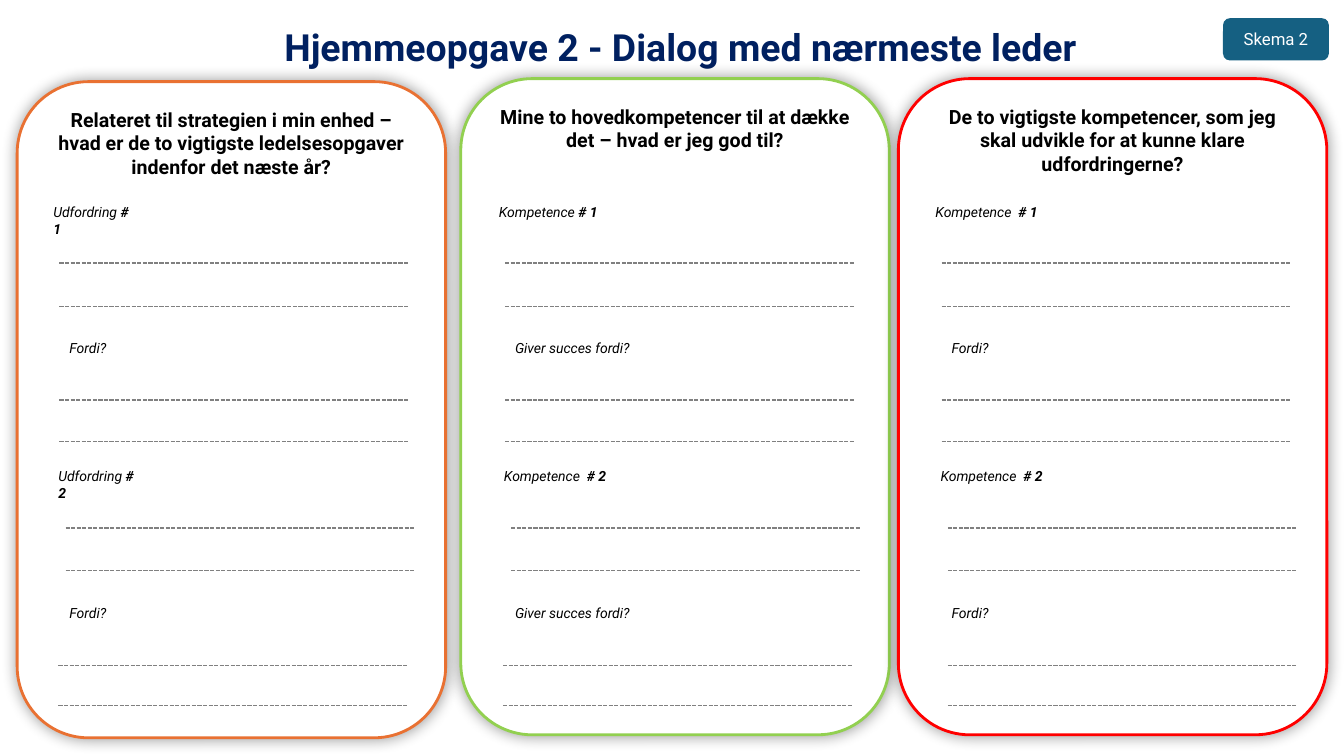
from lxml import etree
from pptx import Presentation
from pptx.dml.color import RGBColor
from pptx.enum.dml import MSO_LINE
from pptx.enum.shapes import MSO_CONNECTOR, MSO_SHAPE
from pptx.enum.text import MSO_ANCHOR, MSO_AUTO_SIZE, PP_ALIGN
from pptx.oxml import parse_xml
from pptx.oxml.ns import nsdecls, qn
from pptx.util import Pt

PX = 9144
BLACK = RGBColor(0, 0, 0)
WHITE = RGBColor(255, 255, 255)
NAVY = RGBColor(0x00, 0x20, 0x60)
TEAL = RGBColor(0x15, 0x60, 0x82)
GREY = RGBColor(0x80, 0x80, 0x80)
ORANGE = RGBColor(0xE9, 0x71, 0x32)
GREEN = RGBColor(0x92, 0xD0, 0x50)
RED = RGBColor(0xFF, 0x00, 0x00)

TITLE = "Hjemmeopgave 2 - Dialog med nærmeste leder"
TAG = "Skema 2"
COLUMNS = [
    dict(card=(17, 81), color=ORANGE, left=59, last_dx=-1,
         heading="Relateret til strategien i min enhed – hvad er de to "
                 "vigtigste ledelsesopgaver indenfor det næste år?",
         topics=[("Udfordring ", "# 1", 105), ("Udfordring ", "# 2", 105)],
         reason=("Fordi?", 58)),
    dict(card=(457, 78), color=GREEN, left=501, last_dx=-2,
         heading="Mine to hovedkompetencer til at dække det – "
                 "hvad er jeg god til?",
         topics=[("Kompetence ", "# 1", 118), ("Kompetence  ", "# 2", 121)],
         reason=("Giver succes fordi?", 136)),
    dict(card=(891, 78), color=RED, left=934, last_dx=6,
         heading="De to vigtigste kompetencer, som jeg skal udvikle "
                 "for at kunne klare udfordringerne?",
         topics=[("Kompetence  ", "# 1", 121), ("Kompetence  ", "# 2", 121)],
         reason=("Fordi?", 58)),
]
CARD_W, CARD_H = 425, 651
LINE_W, LABEL_H = 346, 27
TOPIC_AT = [(-16, 197), (-11, 459)]
REASON_Y = [332, 595]
FIRST_LINES = [(0, 261), (0, 304), (0, 397), (0, 438), (6, 524), (6, 566)]
LAST_LINES = [660, 700]

prs = Presentation()
prs.slide_width, prs.slide_height = 1333 * PX, 750 * PX
s = prs.slides.add_slide(prs.slide_layouts[5])


def box(*at):
    return [v * PX for v in at]


def style(r, size, color, bold=False, italic=False):
    r.font.name = "Roboto"
    r.font.size = Pt(size)
    r.font.color.rgb = color
    r.font.bold = bold
    r.font.italic = italic


def add_panel(at, fill, text, size, color, bold, anchor):
    sp = s.shapes.add_shape(MSO_SHAPE.ROUNDED_RECTANGLE, *box(*at))
    sp.shadow.inherit = False
    sp.fill.solid()
    sp.fill.fore_color.rgb = fill
    sp.line.fill.background()
    tf = sp.text_frame
    tf.word_wrap = True
    tf.vertical_anchor = anchor
    tf.text = text
    p = tf.paragraphs[0]
    p.alignment = PP_ALIGN.CENTER
    style(p.runs[0], size, color, bold)
    return sp


def add_card(column):
    sp = add_panel((*column["card"], CARD_W, CARD_H), WHITE,
                   column["heading"], 14, BLACK, True, MSO_ANCHOR.TOP)
    sp.line.color.rgb = column["color"]
    sp.line.width = Pt(2)
    effects = sp._element.spPr.find(qn("a:effectLst"))
    effects.append(parse_xml(
        f'<a:outerShdw {nsdecls("a")} blurRad="{Pt(11)}" dist="0" dir="0" '
        'algn="ctr" rotWithShape="0"><a:srgbClr val="000000">'
        '<a:alpha val="40000"/></a:srgbClr></a:outerShdw>'))


def add_label(x, y, w, text, number=""):
    tf = s.shapes.add_textbox(*box(x, y, w, LABEL_H)).text_frame
    tf.word_wrap = True
    p = tf.paragraphs[0]
    for part, bold in ((text, False), (number, True)):
        if part:
            r = p.add_run()
            r.text = part
            style(r, 10, BLACK, bold, True)


def add_line(x, y):
    c = s.shapes.add_connector(MSO_CONNECTOR.STRAIGHT,
                               *box(x, y, x + LINE_W, y))
    c.line.color.rgb = GREY
    c.line.width = Pt(1)
    c.line.dash_style = MSO_LINE.SQUARE_DOT
    etree.SubElement(c._element.spPr, qn("a:effectLst"))


title = s.shapes.title
title.left, title.top, title.width, title.height = box(138, 8, 1075, 60)
tf = title.text_frame
tf.text = TITLE
tf.word_wrap = True
tf.auto_size = MSO_AUTO_SIZE.NONE
tf.vertical_anchor = MSO_ANCHOR.BOTTOM
tf.margin_left = tf.margin_top = tf.margin_right = tf.margin_bottom = 0
p = tf.paragraphs[0]
p.alignment = PP_ALIGN.CENTER
p.line_spacing = Pt(33)
style(p.runs[0], 26.7, NAVY, True)

for column in COLUMNS:
    add_card(column)
    left = column["left"]
    for (dx, y), (text, number, w) in zip(TOPIC_AT, column["topics"]):
        add_label(left + dx, y, w, text, number)
    text, w = column["reason"]
    for y in REASON_Y:
        add_label(left, y, w, text)
    for dx, y in FIRST_LINES + [(column["last_dx"], y) for y in LAST_LINES]:
        add_line(left + dx, y)

add_panel((1213, 18, 105, 42), TEAL, TAG, 12, WHITE, False, MSO_ANCHOR.MIDDLE)

prs.save("out.pptx")
